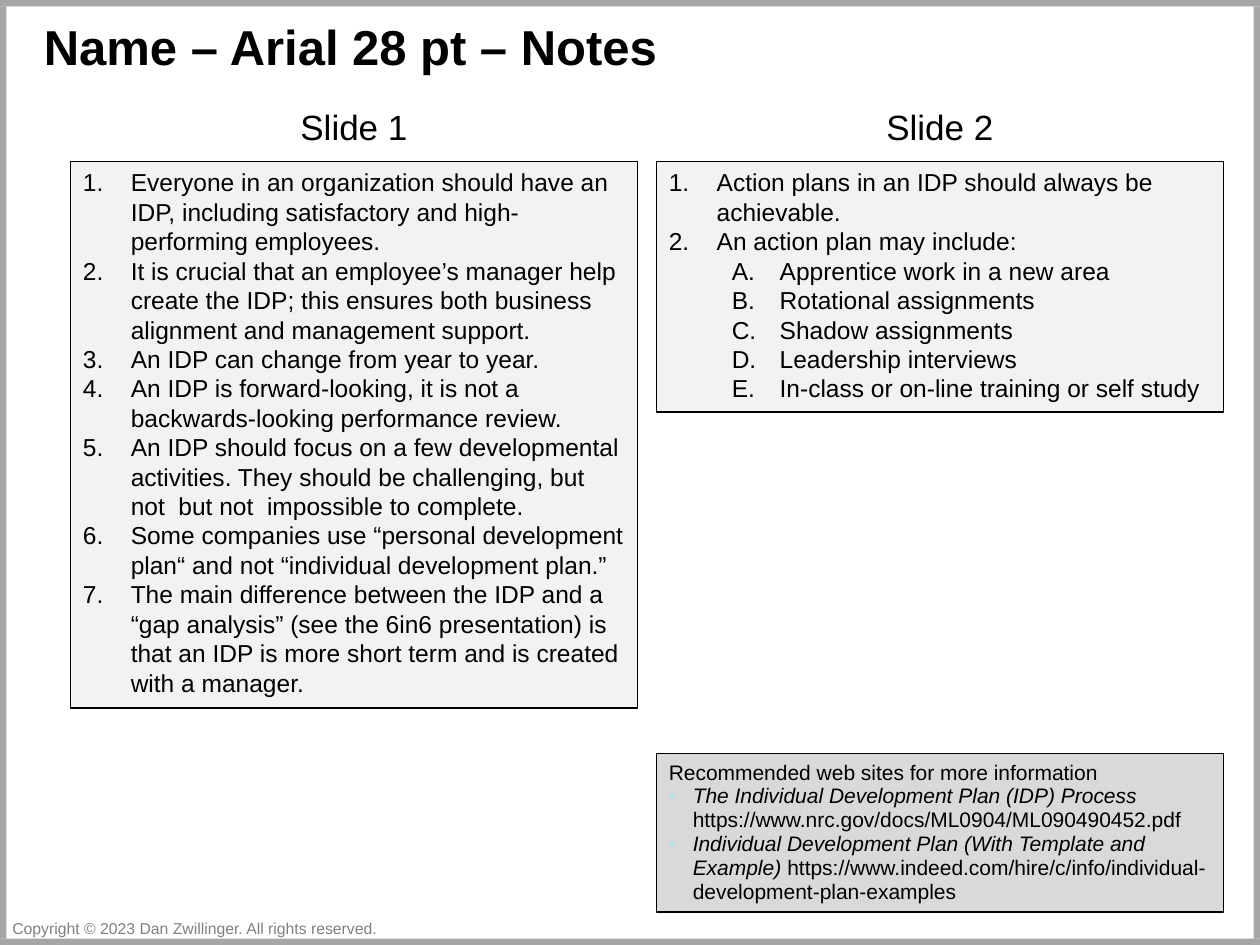
from lxml import etree
from pptx import Presentation
from pptx import util as u
from pptx.dml.color import RGBColor
from pptx.enum import shapes, text
from pptx.oxml.ns import qn

THEME = {
    "font": "Arial",
    "ink": "000000", "muted": "808080", "frame": "A6A6A6",
    "panel": "F2F2F2", "sources": "D9D9D9", "bullet": "BBE0E3",
    "title": 28, "heading": 20, "body": 14, "links": 12, "footer": 9,
}
WIDTH, HEIGHT = 10, 7.5
COL_LEFT, COL_WIDTH, COL_STEP = 0.56, 4.5, 4.65
HEADING_TOP, PANEL_TOP, SOURCES_TOP = 0.79, 1.28, 5.98
BAR = 0.05

# Paragraph formats: left margin, hanging indent, bullet tag and its attributes
PLAIN = {}
NUMBER = {"margin": 0.38, "hang": 0.38,
          "bullet": ("a:buAutoNum", {"type": "arabicPeriod"})}
LETTER = {"margin": 0.88, "hang": 0.38, "level": 1,
          "bullet": ("a:buAutoNum", {"type": "alphaUcPeriod"})}
DOT = {"margin": 0.19, "hang": 0.19, "spacing": 0.95, "color": THEME["bullet"],
       "bullet": ("a:buChar", {"char": "•"})}

IDP_NOTES = [
    "Everyone in an organization should have an IDP, including satisfactory "
    "and high-performing employees.",
    "It is crucial that an employee’s manager help create the IDP; this ensures "
    "both business alignment and management support.",
    "An IDP can change from year to year.",
    "An IDP is forward-looking, it is not a backwards-looking performance review.",
    "An IDP should focus on a few developmental activities. They should be "
    "challenging, but not  but not  impossible to complete.",
    "Some companies use “personal development plan“ and not “individual "
    "development plan.”",
    "The main difference between the IDP and a “gap analysis” (see the 6in6 "
    "presentation) is that an IDP is more short term and is created with a manager.",
]
PLAN_NOTES = [
    "Action plans in an IDP should always be achievable.",
    "An action plan may include:",
]
PLAN_ITEMS = [
    "Apprentice work in a new area",
    "Rotational assignments",
    "Shadow assignments",
    "Leadership interviews",
    "In-class or on-line training or self study",
]
WEB_SITES = [
    ("The Individual Development Plan (IDP) Process ",
     "https://www.nrc.gov/docs/ML0904/ML090490452.pdf"),
    ("Individual Development Plan (With Template and Example) ",
     "https://www.indeed.com/hire/c/info/individual-development-plan-examples"),
]


def column(index):
    return COL_LEFT + index * COL_STEP


def set_all(obj, values):
    for name, value in values.items():
        setattr(obj, name, value)


def add_bullet(p, fmt):
    """Give the paragraph its hanging indent and its number, letter or dot."""
    pPr = p._p.get_or_add_pPr()
    pPr.set("marL", str(u.Inches(fmt["margin"])))
    pPr.set("indent", str(-u.Inches(fmt["hang"])))
    if "color" in fmt:
        clr = etree.SubElement(pPr, qn("a:buClr"))
        etree.SubElement(clr, qn("a:srgbClr"), val=fmt["color"])
    tag, attrs = fmt["bullet"]
    etree.SubElement(pPr, qn("a:buFont"), typeface=THEME["font"])
    etree.SubElement(pPr, qn(tag), attrs)


def write(tf, paragraphs, size, color="ink", bold=False, align="LEFT", wrap=True):
    """Fill a frame from (format, runs) pairs; a run is (text, italic)."""
    set_all(tf, {"word_wrap": wrap, "vertical_anchor": text.MSO_ANCHOR.TOP})
    for i, (fmt, runs) in enumerate(paragraphs):
        p = tf.add_paragraph() if i else tf.paragraphs[0]
        set_all(p, {"alignment": getattr(text.PP_ALIGN, align),
                    "level": fmt.get("level", 0),
                    "line_spacing": fmt.get("spacing")})
        if fmt:
            add_bullet(p, fmt)
        for words, italic in runs:
            r = p.add_run()
            r.text = words
            set_all(r.font, {"name": THEME["font"], "size": u.Pt(THEME[size]),
                             "bold": bold, "italic": italic})
            r.font.color.rgb = RGBColor.from_string(THEME[color])


def listed(fmt, lines):
    return [(fmt, [(line, False)]) for line in lines]


def add_rect(slide, box, fill, outlined=False):
    sp = slide.shapes.add_shape(shapes.MSO_SHAPE.RECTANGLE, *map(u.Inches, box))
    sp.shadow.inherit = False
    sp.fill.solid()
    sp.fill.fore_color.rgb = RGBColor.from_string(THEME[fill])
    if outlined:
        sp.line.color.rgb = RGBColor.from_string(THEME["ink"])
        sp.line.width = u.Pt(0.75)
    else:
        sp.line.fill.background()
    return sp


def add_frame(slide):
    side = HEIGHT - 2 * BAR
    for box in [(0, 0, WIDTH, BAR), (0, HEIGHT - BAR, WIDTH, BAR),
                (0, BAR, BAR, side), (WIDTH - BAR, BAR, BAR, side)]:
        add_rect(slide, box, "frame")


def add_label(slide, box, words, size, **style):
    sp = slide.shapes.add_textbox(*map(u.Inches, box))
    write(sp.text_frame, listed(PLAIN, [words]), size, **style)


def add_panel(slide, col, top, height, paragraphs, fill="panel", size="body"):
    sp = add_rect(slide, (column(col), top, COL_WIDTH, height), fill, outlined=True)
    write(sp.text_frame, paragraphs, size)


def main():
    prs = Presentation()
    set_all(prs, {"slide_width": u.Inches(WIDTH), "slide_height": u.Inches(HEIGHT)})
    slide = prs.slides.add_slide(prs.slide_layouts[6])

    add_frame(slide)
    add_label(slide, (0.25, 0.08, 7.88, 0.57), "Name – Arial 28 pt – Notes",
              "title", bold=True)
    for col, heading in enumerate(["Slide 1", "Slide 2"]):
        add_label(slide, (column(col), HEADING_TOP, COL_WIDTH, 0.44), heading,
                  "heading", align="CENTER")
    add_panel(slide, 0, PANEL_TOP, 4.34, listed(NUMBER, IDP_NOTES))
    add_panel(slide, 1, PANEL_TOP, 1.99,
              listed(NUMBER, PLAN_NOTES) + listed(LETTER, PLAN_ITEMS))
    add_label(slide, (0, 7.24, 3.14, 0.25),
              "Copyright © 2023 Dan Zwillinger. All rights reserved.",
              "footer", color="muted", wrap=False)
    sites = [(DOT, [(name, True), (link, False)]) for name, link in WEB_SITES]
    add_panel(slide, 1, SOURCES_TOP, 1.26,
              listed(PLAIN, ["Recommended web sites for more information"]) + sites,
              fill="sources", size="links")

    prs.save("out.pptx")


if __name__ == "__main__":
    main()
